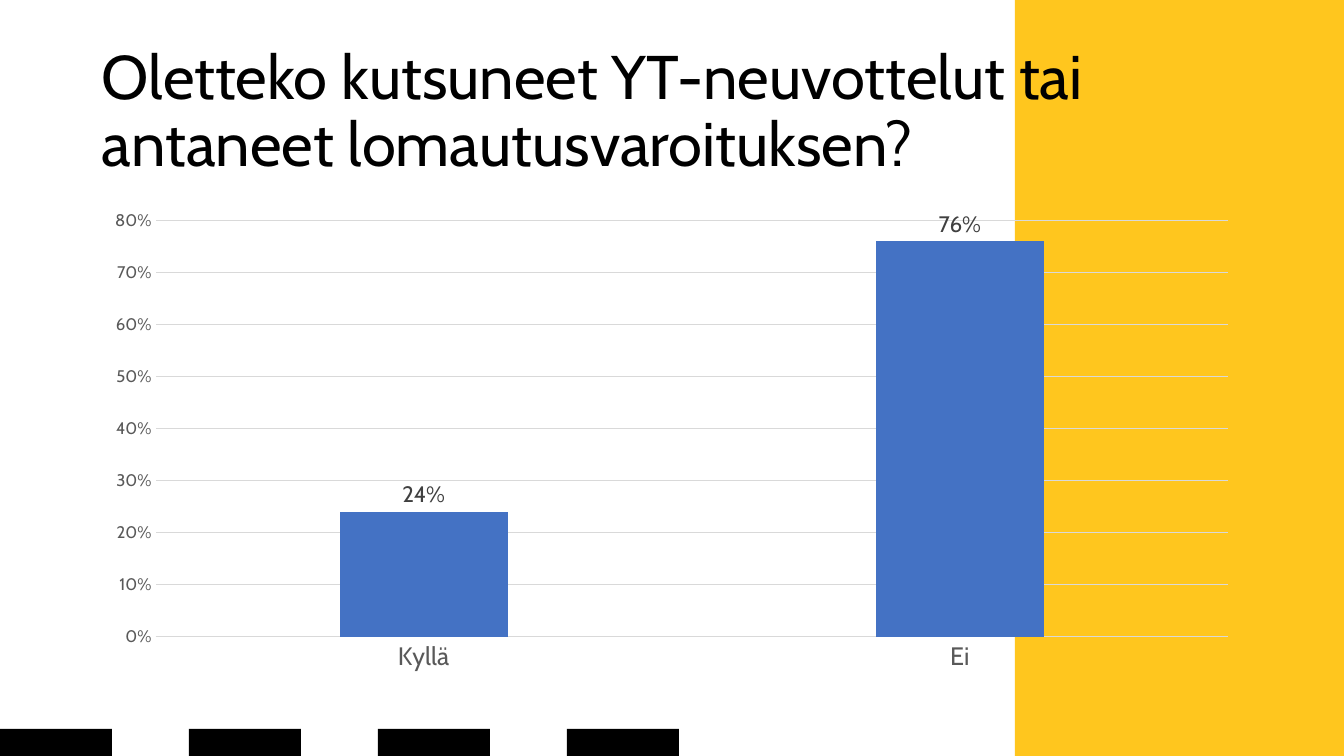
from pptx import Presentation
from pptx.chart.data import CategoryChartData
from pptx.dml.color import RGBColor
from pptx.enum.chart import XL_CHART_TYPE, XL_LABEL_POSITION, XL_TICK_MARK
from pptx.enum.shapes import MSO_SHAPE
from pptx.enum.text import MSO_ANCHOR
from pptx.util import Emu, Pt

PAGE_WIDTH, PAGE_HEIGHT = 1344, 756
EMU_PER_PX = 12192000 / PAGE_WIDTH
BLANK_LAYOUT = 6


def px(length):
    return Emu(round(length * EMU_PER_PX))


def color(hex_code):
    return RGBColor.from_string(hex_code)


class Page:
    FONT = "Cabin"
    BLACK = "000000"
    YELLOW = "FFC61E"
    BLUE = "4472C4"
    AXIS_TEXT = "595959"
    LABEL_TEXT = "404040"
    GRID = "D9D9D9"

    def __init__(self, deck):
        self.slide = deck.slides.add_slide(deck.slide_layouts[BLANK_LAYOUT])

    def style_font(self, font, size, hex_code):
        font.name = self.FONT
        font.size = Pt(size)
        font.color.rgb = color(hex_code)

    def style_line(self, line):
        line.color.rgb = color(self.GRID)
        line.width = Pt(0.75)

    def block(self, left, top, width, height, hex_code):
        shape = self.slide.shapes.add_shape(
            MSO_SHAPE.RECTANGLE, px(left), px(top), px(width), px(height))
        shape.shadow.inherit = False
        shape.fill.solid()
        shape.fill.fore_color.rgb = color(hex_code)
        shape.line.fill.background()

    def title(self, left, top, width, height, text):
        box = self.slide.shapes.add_textbox(px(left), px(top), px(width), px(height))
        frame = box.text_frame
        frame.word_wrap = True
        frame.vertical_anchor = MSO_ANCHOR.MIDDLE
        para = frame.paragraphs[0]
        para.text = text
        para.line_spacing = 0.9
        self.style_font(para.font, 44, self.BLACK)

    def column_chart(self, left, top, width, height, shares):
        data = CategoryChartData(number_format="0%")
        data.categories = list(shares)
        data.add_series("Series 1", list(shares.values()))
        chart = self.slide.shapes.add_chart(
            XL_CHART_TYPE.COLUMN_CLUSTERED,
            px(left), px(top), px(width), px(height), data).chart
        chart.has_title = False
        chart.has_legend = False
        self.style_font(chart.font, 10, self.BLACK)

        for axis, size in ((chart.category_axis, 18), (chart.value_axis, 12)):
            axis.major_tick_mark = XL_TICK_MARK.NONE
            axis.minor_tick_mark = XL_TICK_MARK.NONE
            self.style_font(axis.tick_labels.font, size, self.AXIS_TEXT)
        self.style_line(chart.category_axis.format.line)

        values = chart.value_axis
        values.minimum_scale, values.maximum_scale, values.major_unit = 0, 0.8, 0.1
        values.tick_labels.number_format = "0%"
        values.tick_labels.number_format_is_linked = False
        values.format.line.fill.background()
        values.has_major_gridlines = True
        self.style_line(values.major_gridlines.format.line)

        plot = chart.plots[0]
        plot.vary_by_categories = False
        plot.gap_width = 219
        plot.overlap = -27
        series = plot.series[0]
        series.format.fill.solid()
        series.format.fill.fore_color.rgb = color(self.BLUE)
        labels = series.data_labels
        labels.show_value = True
        labels.number_format = "0%"
        labels.number_format_is_linked = False
        labels.position = XL_LABEL_POSITION.OUTSIDE_END
        self.style_font(labels.font, 16, self.LABEL_TEXT)


def main():
    deck = Presentation()
    deck.slide_width, deck.slide_height = px(PAGE_WIDTH), px(PAGE_HEIGHT)
    page = Page(deck)

    panel_left = 1015
    page.block(panel_left, 0, PAGE_WIDTH - panel_left, PAGE_HEIGHT, page.YELLOW)
    dash_width, dash_height, dash_pitch = 112, 27, 189
    for index in range(4):
        page.block(index * dash_pitch, PAGE_HEIGHT - dash_height,
                   dash_width, dash_height, page.BLACK)

    left, width = 92, 1159
    page.title(left, 40, width, 146,
               "Oletteko kutsuneet YT-neuvottelut tai antaneet lomautusvaroituksen?")
    page.column_chart(left, 201, width, 480, {"Kyllä": 0.24, "Ei": 0.76})
    deck.save("out.pptx")


if __name__ == "__main__":
    main()
